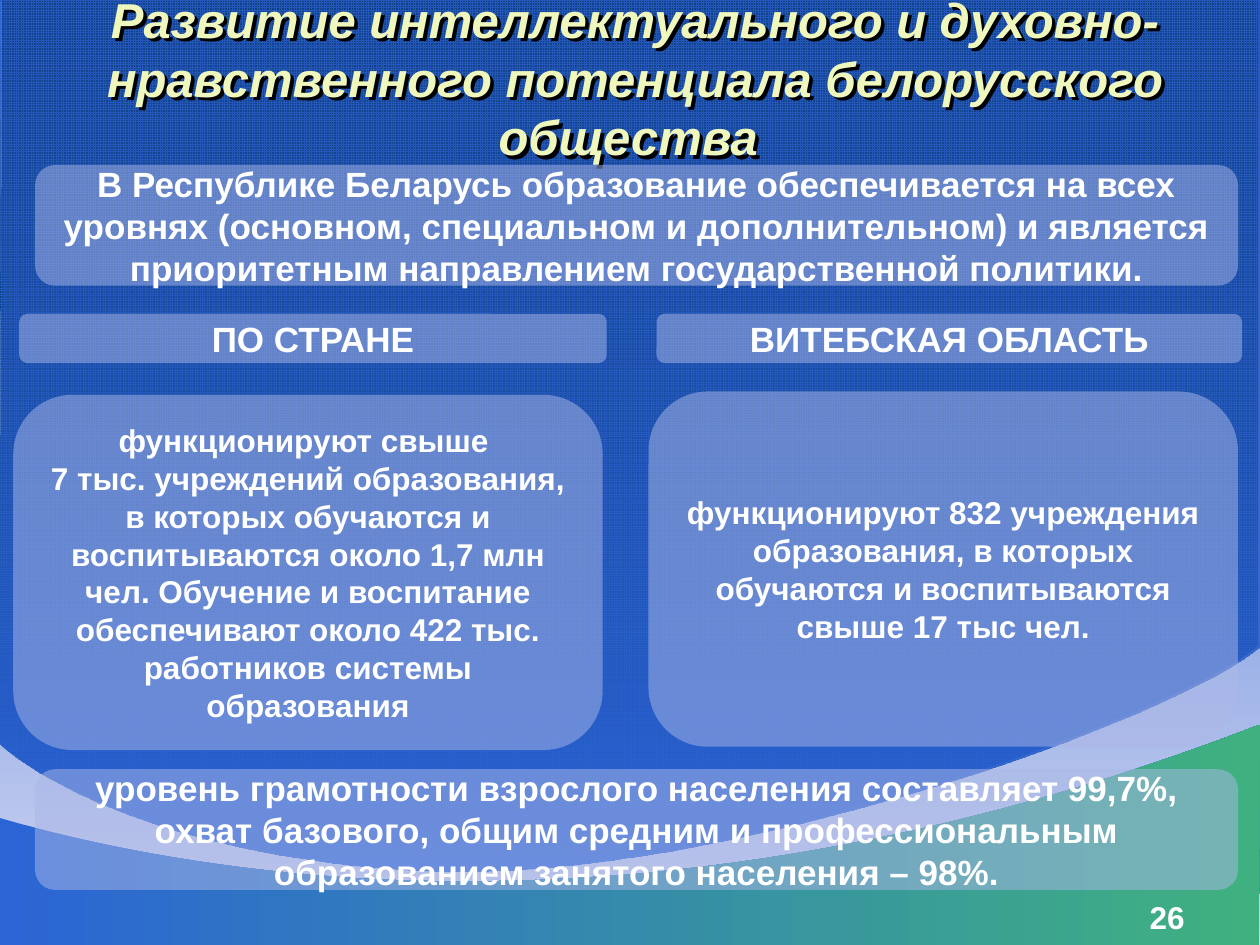
from pptx import Presentation
from pptx.dml.color import RGBColor
from pptx.enum.dml import MSO_PATTERN
from pptx.enum.shapes import MSO_SHAPE as Shape
from pptx.enum.text import MSO_ANCHOR as Anchor, MSO_AUTO_SIZE as AutoSize, PP_ALIGN as Align
from pptx.oxml import parse_xml
from pptx.oxml.ns import nsdecls, qn
from pptx.util import Pt

COLORS = {
    "blue": "2B64D5", "navy": "003D7B", "deep": "1F4898", "pale": "CED4F0",
    "green": "3FB180", "panel": "ACB8E7", "white": "FFFFFF", "title": "F0F7BD",
    "shadow": "000000",
}
TITLE = "Развитие интеллектуального и духовно-нравственного потенциала белорусского общества "
PAGE_NUMBER = "26"

# Panels: left, top, width, height, text size, paragraphs
PANELS = [
    (20, 94.3, 687.5, 69, 20, [
        "В Республике Беларусь образование обеспечивается на всех уровнях (основном, специальном "
        "и дополнительном) и является приоритетным направлением государственной политики."]),
    (11, 179.3, 335.7, 28.2, 20, ["ПО СТРАНЕ"]),
    (375.2, 179.3, 334.6, 28.2, 20, ["ВИТЕБСКАЯ ОБЛАСТЬ"]),
    (7.6, 225.6, 336.8, 203, 18, [
        "функционируют свыше ",
        "7 тыс. учреждений образования, в которых обучаются и воспитываются около 1,7 млн чел. "
        "Обучение и воспитание обеспечивают около 422 тыс. работников системы образования"]),
    (370.6, 223.7, 336.8, 203, 18, [
        "функционируют 832 учреждения образования, в которых обучаются и воспитываются "
        "свыше 17 тыс чел."]),
    (20, 439.6, 687.5, 69, 20, [
        "уровень грамотности взрослого населения составляет 99,7%, охват базового, общим средним "
        "и профессиональным образованием занятого населения – 98%."]),
]

# Backdrop outlines: start, two Bezier curves of three points each, closing corners
SKY = [(-0.7, 424.1),
       (7.9, 432.7), (79.2, 488.9), (246.2, 496.8),
       (412.6, 503.3), (672.5, 409), (719.3, 368.6),
       (719.3, -1.4), (0, -0.7), (0.7, 0.7)]
GROUND = [(-0.7, 467.3),
          (7.9, 469.4), (92.9, 496.8), (219.6, 502.6),
          (346.3, 508.3), (519.8, 491.8), (720, 414),
          (719.3, 540), (-2.2, 540)]
CURVES = 2


def color(name):
    return RGBColor.from_string(COLORS[name])


def set_alpha(fill_part, percent):
    srgb = next(fill_part.iter(qn("a:srgbClr")))
    srgb.append(parse_xml(f'<a:alpha {nsdecls("a")} val="{percent * 1000}"/>'))


def set_gradient(fill, names, angle):
    fill.gradient()
    fill.gradient_angle = angle
    for stop, name in zip(fill.gradient_stops, names):
        stop.color.rgb = color(name)


def add_outline(slide, points, dx=0, dy=0):
    points = [(Pt(x + dx), Pt(y + dy)) for x, y in points]
    builder = slide.shapes.build_freeform(*points[0], scale=1.0)
    builder.add_line_segments(points[1:], close=True)
    shape = builder.convert_to_shape()
    shape.shadow.inherit = False
    shape.line.fill.background()
    # Each leading triple of line segments becomes one Bezier curve
    lines = list(shape._element.iter(qn("a:lnTo")))
    for index in range(CURVES):
        triple = lines[3 * index:3 * index + 3]
        curve = parse_xml(f'<a:cubicBezTo {nsdecls("a")}/>')
        triple[0].addprevious(curve)
        for line in triple:
            curve.append(line[0])
            line.getparent().remove(line)
    return shape


def write_text(box, paragraphs, size, name="white", align=Align.CENTER, anchor=Anchor.MIDDLE,
               italic=False):
    frame = box.text_frame
    frame.word_wrap = True
    frame.auto_size = AutoSize.NONE
    frame.vertical_anchor = anchor
    font_format = {"name": "Arial", "size": Pt(size), "bold": True, "italic": italic}
    for index, text in enumerate(paragraphs):
        para = frame.add_paragraph() if index else frame.paragraphs[0]
        para.alignment = align
        span = para.add_run()
        span.text = text
        for key, value in font_format.items():
            setattr(span.font, key, value)
        span.font.color.rgb = color(name)


def main():
    deck = Presentation()
    deck.slide_width, deck.slide_height = Pt(720), Pt(540)
    slide = deck.slides.add_slide(deck.slide_layouts[5])

    # Backdrop
    set_gradient(slide.background.fill, ("blue", "pale"), 270)
    grid = add_outline(slide, SKY)
    grid.fill.patterned()
    grid.fill.pattern = MSO_PATTERN.SMALL_GRID
    grid.fill.fore_color.rgb = color("blue")
    grid.fill.back_color.rgb = color("navy")
    veil = add_outline(slide, SKY, 0.7, 0.7)
    set_gradient(veil.fill, ("deep", "blue"), 270)
    set_alpha(veil._element.spPr, 46)
    ground = add_outline(slide, GROUND)
    set_gradient(ground.fill, ("blue", "green"), 0)

    # Page number
    number = slide.shapes.add_textbox(Pt(516.2), Pt(509.8), Pt(167.8), Pt(19.4))
    write_text(number, [PAGE_NUMBER], 18, align=Align.RIGHT, anchor=Anchor.TOP)

    # Title in front of the backdrop; without a fill, its shadow falls from the letters
    title = slide.shapes.title
    title.left, title.top, title.width, title.height = Pt(2.9), Pt(0), Pt(720), Pt(88.6)
    write_text(title, [TITLE], 28, "title", italic=True)
    title.fill.background()
    title._element.spPr.append(parse_xml(
        f'<a:effectLst {nsdecls("a")}><a:outerShdw dist="35921" dir="2700000">'
        f'<a:srgbClr val="{COLORS["shadow"]}"/></a:outerShdw></a:effectLst>'))
    slide.shapes._spTree.append(title._element)

    # Panels
    for left, top, width, height, size, paragraphs in PANELS:
        panel = slide.shapes.add_shape(
            Shape.ROUNDED_RECTANGLE, Pt(left), Pt(top), Pt(width), Pt(height))
        panel.shadow.inherit = False
        panel.line.fill.background()
        panel.fill.solid()
        panel.fill.fore_color.rgb = color("panel")
        set_alpha(panel._element.spPr, 50)
        write_text(panel, paragraphs, size)

    deck.save("out.pptx")


if __name__ == "__main__":
    main()
